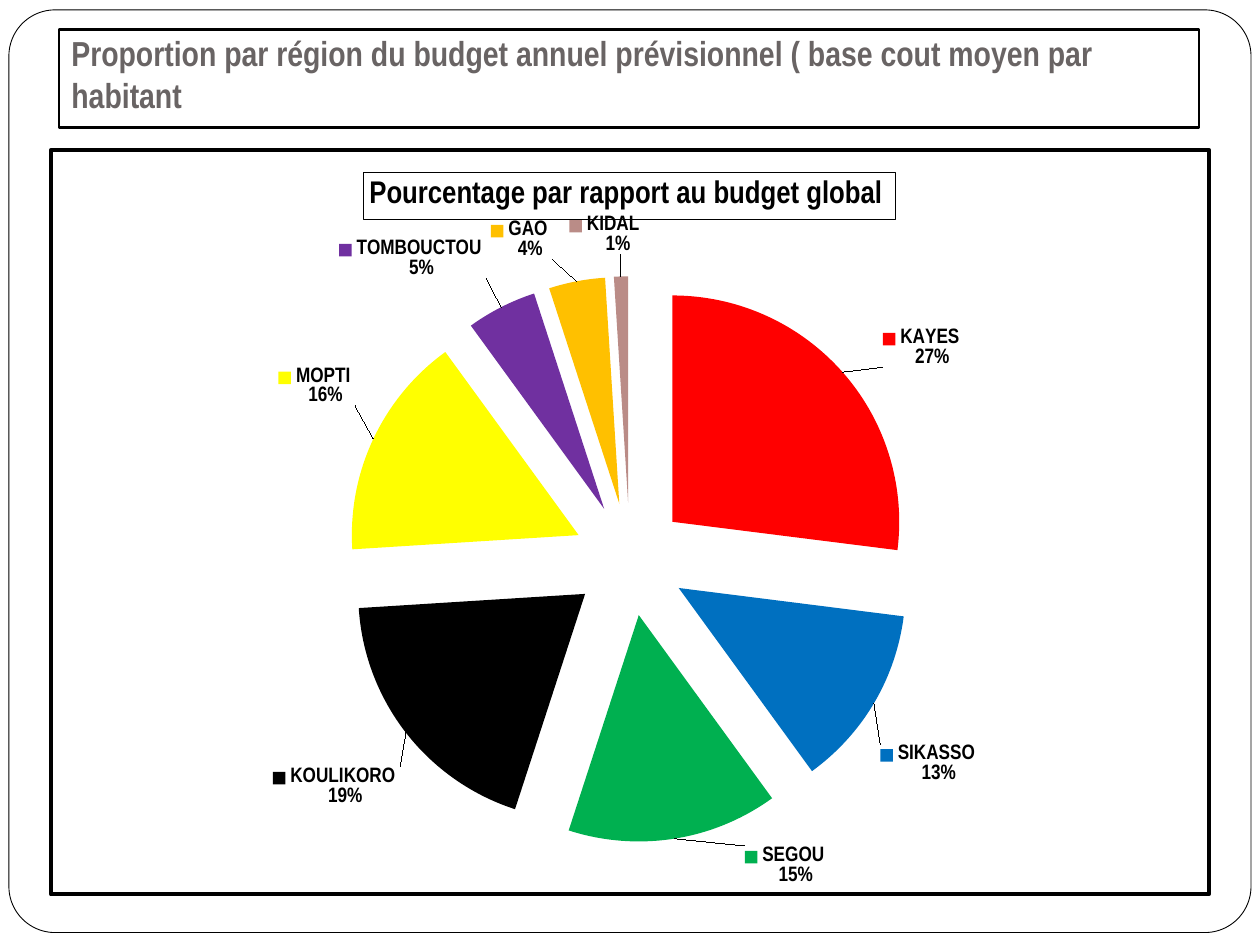
from lxml import etree
from copy import deepcopy
from pptx import Presentation
from pptx.chart.data import CategoryChartData
from pptx.dml.color import RGBColor
from pptx.enum.chart import XL_CHART_TYPE, XL_LABEL_POSITION
from pptx.enum.shapes import MSO_SHAPE
from pptx.enum.text import MSO_ANCHOR, PP_ALIGN
from pptx.oxml import parse_xml
from pptx.oxml.ns import qn
from pptx.util import Cm, Pt

PIE = XL_CHART_TYPE.PIE
OUTSIDE = XL_LABEL_POSITION.OUTSIDE_END
ROUND_RECT = MSO_SHAPE.ROUNDED_RECTANGLE
BOTTOM = MSO_ANCHOR.BOTTOM
LEFT = PP_ALIGN.LEFT
NARROW = "Arial Narrow"
C_NS = "http://schemas.openxmlformats.org/drawingml/2006/chart"
A_NS = "http://schemas.openxmlformats.org/drawingml/2006/main"


def rgb(value):
    return RGBColor.from_string(value)


def manual_layout(**values):
    """Chart layout element, positions as shares of the chart's size."""
    layout = etree.Element(qn("c:layout"))
    manual = etree.SubElement(layout, qn("c:manualLayout"))
    for name, value in values.items():
        etree.SubElement(manual, qn("c:" + name)).set("val", str(value))
    return layout


prs = Presentation()
prs.slide_width, prs.slide_height = Cm(25.4), Cm(19.05)
s = prs.slides.add_slide(prs.slide_layouts[6])

# Rounded frame
sp = s.shapes.add_shape(ROUND_RECT, Cm(0.18), Cm(0.2), Cm(25.04), Cm(18.6))
sp.adjustments[0] = 0.05
sp.shadow.inherit = False
sp.fill.solid()
sp.fill.fore_color.rgb = rgb("FFFFFF")
sp.line.color.rgb = rgb("000000")
sp.line.width = Pt(0.5)

# Slide title
sp = s.shapes.add_textbox(Cm(1.19), Cm(0.59), Cm(22.98), Cm(1.98))
sp.line.color.rgb = rgb("000000")
sp.line.width = Pt(1.5)
tf = sp.text_frame
frame_format = {"word_wrap": True, "vertical_anchor": BOTTOM,
                "margin_left": Cm(0.25), "margin_right": Cm(0.25),
                "margin_top": Cm(0.13), "margin_bottom": Cm(0.25)}
for name, value in frame_format.items():
    setattr(tf, name, value)
p = tf.paragraphs[0]
p.alignment = LEFT
r = p.add_run()
r.text = "Proportion par région du budget annuel prévisionnel ( base cout moyen par habitant"
for name, value in {"name": NARROW, "size": Pt(19.8), "bold": True}.items():
    setattr(r.font, name, value)
r.font.color.rgb = rgb("696464")

# Regions: name, share, colour, label shift from its default place (x, y)
regions = [
    ("KAYES ", 0.27, "FF0000", 0.03, 0),
    ("SIKASSO ", 0.13, "0070C0", 0, 0.05),
    ("SEGOU ", 0.15, "00B050", 0.06, 0),
    ("KOULIKORO ", 0.19, "000000", 0, 0.04),
    ("MOPTI ", 0.16, "FFFF00", -0.01, -0.04),
    ("TOMBOUCTOU ", 0.05, "7030A0", -0.01, -0.03),
    ("GAO ", 0.04, "FFC000", -0.02, -0.02),
    ("KIDAL  ", 0.01, "BA8C87", -0.01, -0.02),
]
chart_title = "Pourcentage par rapport au budget global "
data = CategoryChartData(number_format="0%")
data.categories = [region[0] for region in regions]
data.add_series(chart_title, [region[1] for region in regions])
chart = s.shapes.add_chart(PIE, Cm(0.99), Cm(2.98), Cm(23.42), Cm(15.09), data).chart
chart.has_legend = False
chart.font.name = "Times New Roman"
chart.font.size = Pt(10)
chart.font.color.rgb = rgb("000000")

# Chart border
chart_xml = chart.element
chart_xml.find(qn("c:txPr")).addprevious(parse_xml(
    f'<c:spPr xmlns:c="{C_NS}" xmlns:a="{A_NS}"><a:noFill/><a:ln w="{Pt(2.25)}">'
    '<a:solidFill><a:srgbClr val="000000"/></a:solidFill></a:ln></c:spPr>'))

# Boxed chart title
chart.has_title = True
title = chart.chart_title
title.include_in_layout = False
r = title.text_frame.paragraphs[0].add_run()
r.text = chart_title
for name, value in {"name": NARROW, "size": Pt(18), "bold": True}.items():
    setattr(r.font, name, value)
r.font.color.rgb = rgb("000000")
title.format.line.color.rgb = rgb("000000")
title.format.line.width = Pt(0.5)
title_xml = chart_xml.find(".//" + qn("c:title"))
for old in title_xml.findall(qn("c:layout")):
    title_xml.remove(old)
title_xml.find(qn("c:tx")).addnext(
    manual_layout(xMode="edge", yMode="edge", x=0.27, y=0.03))

# Plot area
plot_xml = chart_xml.find(".//" + qn("c:plotArea"))
for old in plot_xml.findall(qn("c:layout")):
    plot_xml.remove(old)
plot_xml.insert(0, manual_layout(layoutTarget="inner", xMode="edge", yMode="edge",
                                 x=0.08, y=0.17, w=0.84, h=0.76))

# Exploded slices
plot = chart.plots[0]
plot.vary_by_categories = True
series = plot.series[0]
for i, region in enumerate(regions):
    fill = series.points[i].format.fill
    fill.solid()
    fill.fore_color.rgb = rgb(region[2])
explosion = etree.Element(qn("c:explosion"), val="25")
plot_xml.find(".//" + qn("c:dPt")).addprevious(explosion)

# Labels: colour key, region and share
labels = series.data_labels
label_format = {"number_format": "0%", "number_format_is_linked": False,
                "position": OUTSIDE, "show_value": True,
                "show_category_name": True, "show_legend_key": True,
                "show_percentage": False}
for name, value in label_format.items():
    setattr(labels, name, value)
for name, value in {"name": NARROW, "size": Pt(12), "bold": True}.items():
    setattr(labels.font, name, value)
labels.font.color.rgb = rgb("000000")
labels_xml = plot_xml.find(".//" + qn("c:dLbls"))
separator = etree.Element(qn("c:separator"))
separator.text = "\n"
labels_xml.find(qn("c:showBubbleSize")).addnext(separator)
shared = [child for child in labels_xml if child.tag != qn("c:showLeaderLines")]
for i, (*_, dx, dy) in enumerate(regions):
    label = etree.Element(qn("c:dLbl"))
    etree.SubElement(label, qn("c:idx")).set("val", str(i))
    label.append(manual_layout(x=dx, y=dy))
    label.extend(deepcopy(shared))
    labels_xml.insert(i, label)

prs.save("out.pptx")
